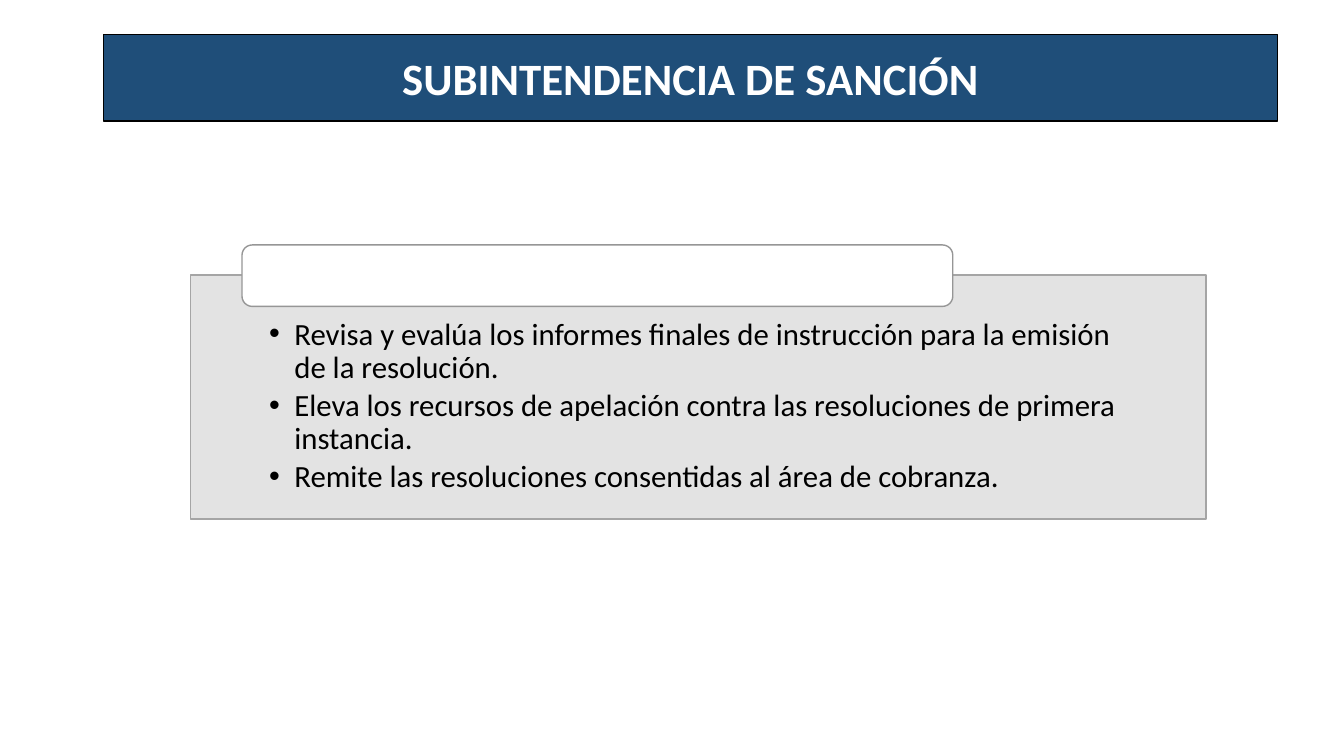
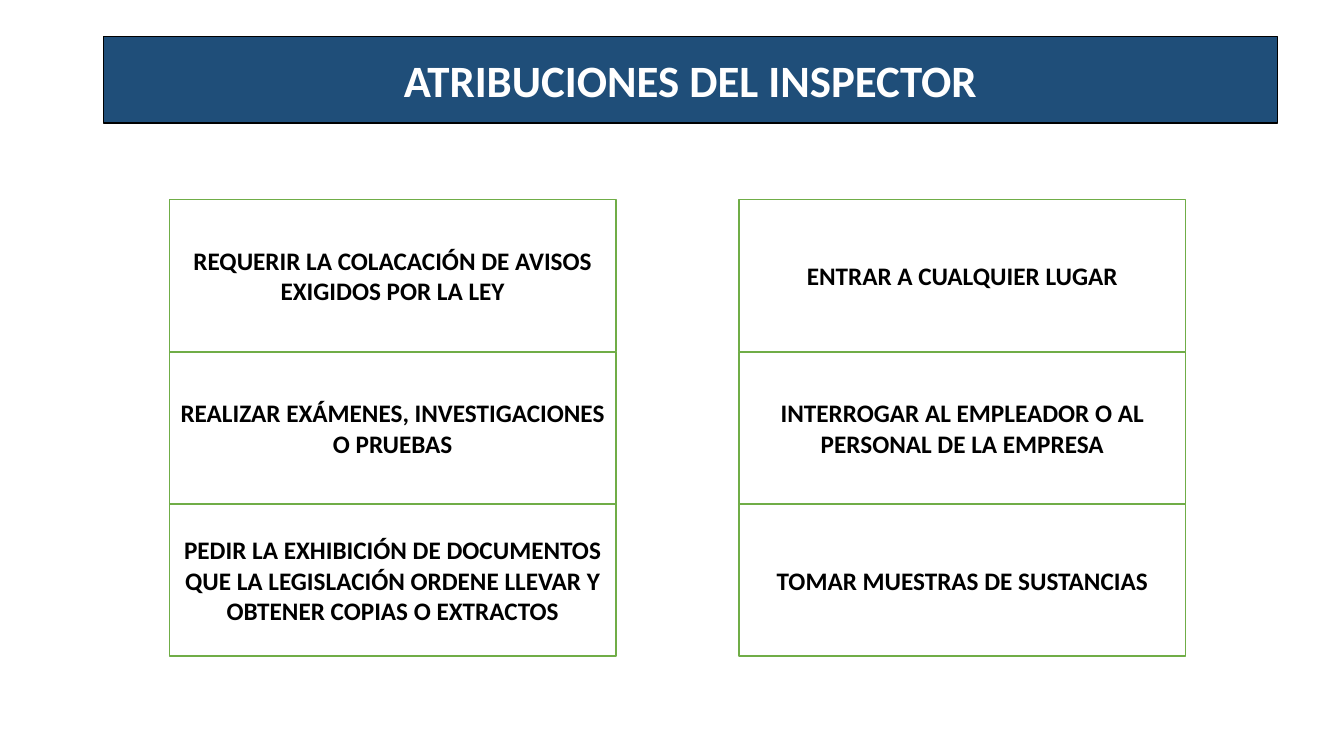
from lxml.etree import SubElement
from pptx import Presentation
from pptx.dml.color import RGBColor
from pptx.enum.shapes import MSO_SHAPE
from pptx.enum.text import MSO_ANCHOR, PP_ALIGN
from pptx.oxml.ns import qn
from pptx.util import Pt

PX = 9144
FONT = "Calibri"
WHITE = RGBColor(0xFF, 0xFF, 0xFF)
BLACK = RGBColor(0, 0, 0)
NAVY = RGBColor(0x1F, 0x4E, 0x79)
GREEN = RGBColor(0x70, 0xAD, 0x47)
PALE = RGBColor(0xE1, 0xE1, 0xE1)
GRAY = RGBColor(0xA5, 0xA5, 0xA5)
DARK = RGBColor(0x96, 0x96, 0x96)


def add_box(slide, kind, left, top, width, height, fill, line):
    box = slide.shapes.add_shape(kind, left * PX, top * PX, width * PX, height * PX)
    box.shadow.inherit = False
    box.fill.solid()
    box.fill.fore_color.rgb = fill
    box.line.color.rgb = line
    box.line.width = Pt(1)
    box.text_frame.word_wrap = True
    box.text_frame.vertical_anchor = MSO_ANCHOR.MIDDLE
    return box


def add_text(para, text, size, color, bold, align):
    para.alignment = align
    run = para.add_run()
    run.text = text
    run.font.name = FONT
    run.font.size = Pt(size)
    run.font.bold = bold
    run.font.color.rgb = color


deck = Presentation()
deck.slide_width = 1333 * PX
deck.slide_height = 750 * PX

slides = []
for title, top in (("SUBINTENDENCIA DE SANCIÓN", 34), ("ATRIBUCIONES DEL INSPECTOR", 36)):
    slide = deck.slides.add_slide(deck.slide_layouts[6])
    band = add_box(slide, MSO_SHAPE.RECTANGLE, 103, top, 1164, 86, NAVY, BLACK)
    add_text(band.text_frame.paragraphs[0], title, 32, WHITE, True, PP_ALIGN.CENTER)
    slides.append(slide)
duties, powers = slides

panel = add_box(duties, MSO_SHAPE.RECTANGLE, 189, 273, 1007, 242, PALE, GRAY)
tint = panel.fill._xPr.find(qn("a:solidFill"))[0]
SubElement(tint, qn("a:alpha"), val="90000")
frame = panel.text_frame
frame.vertical_anchor = MSO_ANCHOR.TOP
frame.margin_left = frame.margin_right = 78 * PX
frame.margin_top = 43 * PX
frame.margin_bottom = 17 * PX
tasks = [
    "Revisa y evalúa los informes finales de instrucción para la emisión de la resolución.",
    "Eleva los recursos de apelación contra las resoluciones de primera instancia.",
    "Remite las resoluciones consentidas al área de cobranza.",
]
for index, task in enumerate(tasks):
    para = frame.add_paragraph() if index else frame.paragraphs[0]
    para.line_spacing = 0.9
    para.space_after = Pt(3.3)
    props = para._p.get_or_add_pPr()
    props.set("marL", str(25 * PX))
    props.set("indent", str(-25 * PX))
    SubElement(props, qn("a:buFont"), typeface="Arial")
    SubElement(props, qn("a:buChar"), char="•")
    add_text(para, task, 22, BLACK, False, PP_ALIGN.LEFT)
add_box(duties, MSO_SHAPE.ROUNDED_RECTANGLE, 240, 243, 705, 61, WHITE, DARK)

rows = [
    ("REQUERIR LA COLACACIÓN DE AVISOS EXIGIDOS POR LA LEY", "ENTRAR A CUALQUIER LUGAR"),
    ("REALIZAR EXÁMENES, INVESTIGACIONES O PRUEBAS",
     "INTERROGAR AL EMPLEADOR O AL PERSONAL DE LA EMPRESA"),
    ("PEDIR LA EXHIBICIÓN DE DOCUMENTOS QUE LA LEGISLACIÓN ORDENE LLEVAR Y OBTENER COPIAS O EXTRACTOS",
     "TOMAR MUESTRAS DE SUSTANCIAS"),
]
for row, texts in enumerate(rows):
    for col, text in enumerate(texts):
        card = add_box(powers, MSO_SHAPE.RECTANGLE, 168 + col * 565, 198 + row * 151,
                       443, 151, WHITE, GREEN)
        add_text(card.text_frame.paragraphs[0], text, 18, BLACK, True, PP_ALIGN.CENTER)

deck.save("out.pptx")
